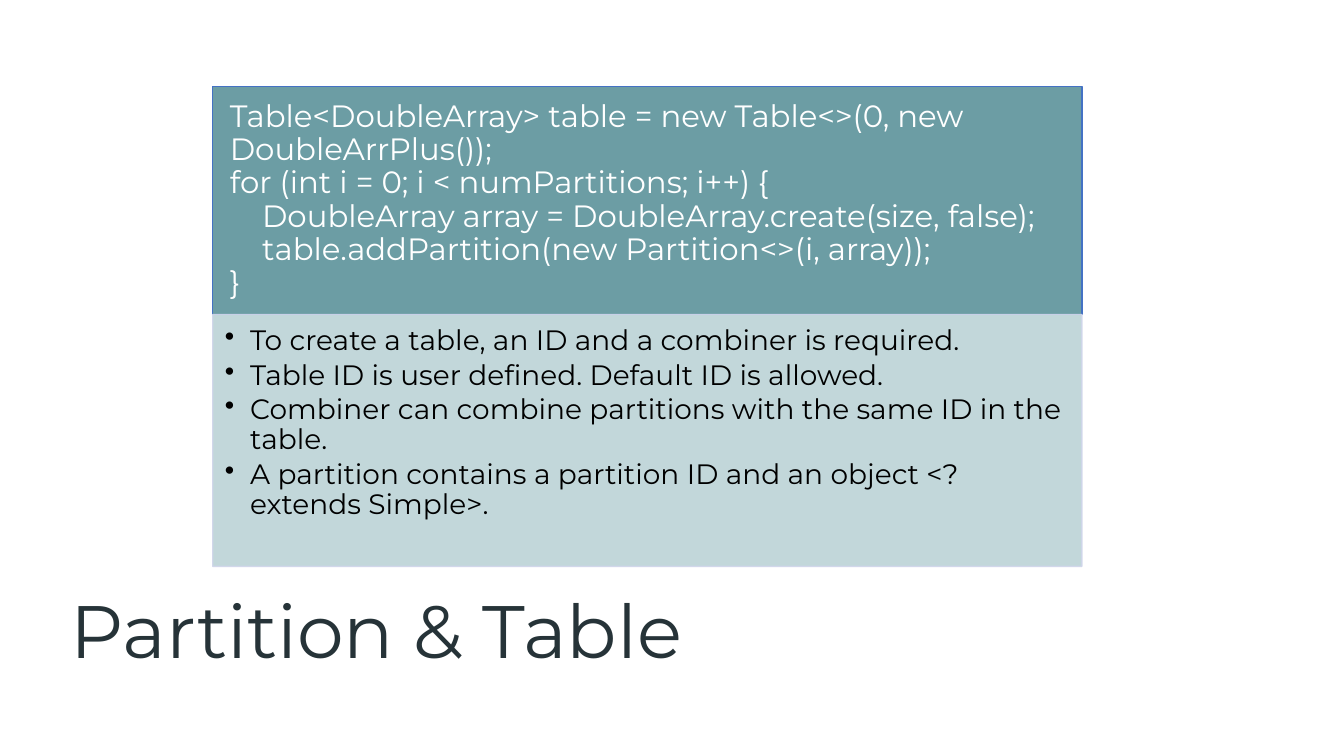
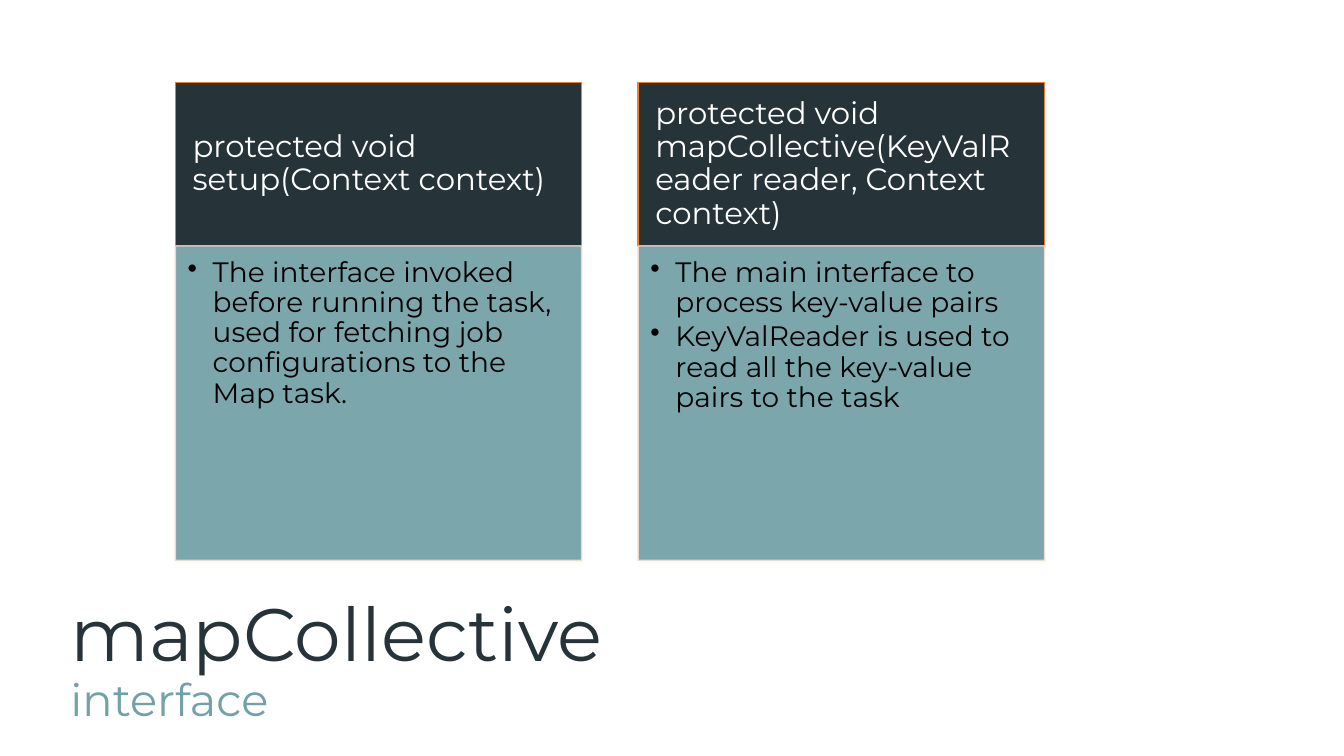
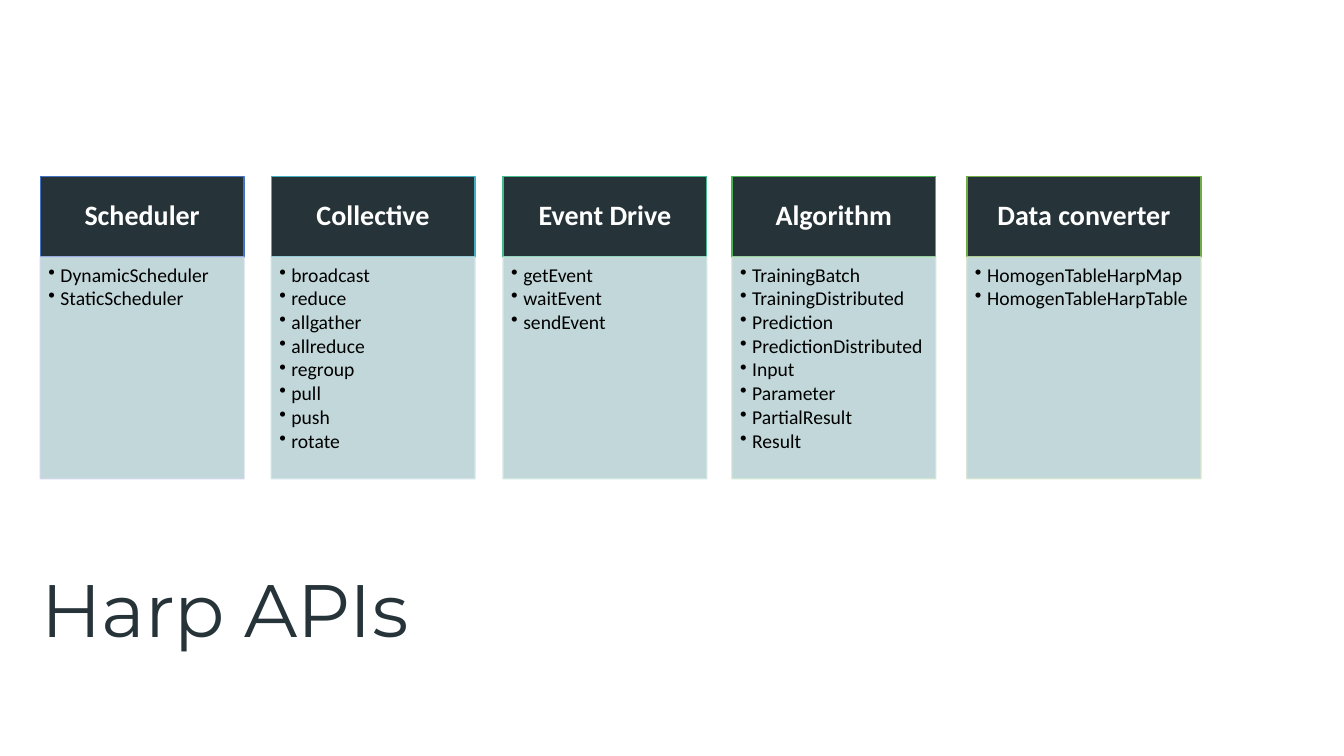
from dataclasses import dataclass
from lxml.etree import SubElement as Sub
from pptx import Presentation
from pptx.dml.color import RGBColor as RGB
from pptx.enum.shapes import MSO_SHAPE as Shape
from pptx.enum.text import MSO_ANCHOR as Anchor, PP_ALIGN as Align
from pptx.oxml.ns import qn
from pptx.util import Pt

PX = 9144


@dataclass(frozen=True)
class Theme:
    dark: str = "263338"
    teal: str = "6C9DA4"
    pale: str = "BCD3D6"
    soft: str = "72A1A8"
    white: str = "FFFFFF"
    black: str = "000000"
    blue: str = "4472C4"
    haze: str = "CFD5EA"
    orange: str = "ED7D31"
    peach: str = "F8D7CE"
    font: str = "Montserrat"
    title: int = 53
    sub: int = 32
    lead: float = 0.9
    clear: int = 90


@dataclass(frozen=True)
class Look:
    font: str
    head: int
    body: int
    bold: bool
    align: Align
    pad: tuple
    inset: tuple
    hang: int
    after: float


T = Theme()
WIDE = Look(T.font, 22, 20, False, Align.LEFT, (17, 10, 17, 10), (12, 12, 16, 17), 25, 3)
SLIM = Look("Calibri", 20, 14, True, Align.CENTER, (16, 9, 16, 9), (8, 8, 11, 12), 12, 1.8)


class Deck:
    def __init__(self):
        self.prs = Presentation()
        self.prs.slide_width = 1333 * PX
        self.prs.slide_height = 750 * PX

    def page(self):
        self.slide = self.prs.slides.add_slide(self.prs.slide_layouts[6])

    def frame(self, shape, inset, anchor):
        frame = shape.text_frame
        frame.word_wrap = True
        frame.vertical_anchor = anchor
        left, top, right, low = [n * PX for n in inset]
        frame.margin_left, frame.margin_top = left, top
        frame.margin_right, frame.margin_bottom = right, low
        return frame

    def run(self, para, text, font, size, color, bold=False):
        run = para.add_run()
        run.text = text
        run.font.name = font
        run.font.size = Pt(size)
        run.font.bold = bold
        run.font.color.rgb = RGB.from_string(color)

    def lines(self, frame, count):
        for i in range(count):
            para = frame.add_paragraph() if i else frame.paragraphs[0]
            para.line_spacing = T.lead
            yield para

    def box(self, x, y, w, h, fill, edge, clear=100):
        box = self.slide.shapes.add_shape(Shape.RECTANGLE, x * PX, y * PX, w * PX, h * PX)
        box.shadow.inherit = False
        box.line.width = Pt(1)
        box.fill.solid()
        for paint, color in ((box.fill, fill), (box.line.fill, edge)):
            paint.solid()
            paint.fore_color.rgb = RGB.from_string(color)
        if clear < 100:
            for node in box._element.spPr.iter(qn("a:srgbClr")):
                Sub(node, qn("a:alpha"), val=str(clear * 1000))
        return box

    def head(self, area, look, fill, edge, rows):
        frame = self.frame(self.box(*area, fill, edge), look.pad, Anchor.MIDDLE)
        for para, (text, indent) in zip(self.lines(frame, len(rows)), rows):
            para.alignment = look.align
            para._p.get_or_add_pPr().set("marL", str(indent * PX))
            self.run(para, text, look.font, look.head, T.white, look.bold)

    def list(self, area, look, fill, edge, items):
        box = self.box(*area, fill, edge, T.clear)
        frame = self.frame(box, look.inset, Anchor.TOP)
        for para, text in zip(self.lines(frame, len(items)), items):
            para.alignment = Align.LEFT
            para.space_after = Pt(look.after)
            props = para._p.get_or_add_pPr()
            props.set("marL", str(look.hang * PX))
            props.set("indent", str(-look.hang * PX))
            Sub(props, qn("a:buChar"), char="•")
            self.run(para, text, look.font, look.body, T.black)

    def card(self, x, y, w, top, low, look, fills, edges, rows, items):
        self.head((x, y, w, top), look, fills[0], edges[0], rows)
        self.list((x, y + top, w, low), look, fills[1], edges[1], items)

    def title(self, x, y, text, sub=None):
        box = self.slide.shapes.add_textbox(x * PX, y * PX, 1150 * PX, 145 * PX)
        frame = self.frame(box, (10, 0, 10, 0), Anchor.TOP)
        para = next(self.lines(frame, 1))
        self.run(para, text, T.font, T.title, T.dark)
        if sub:
            para.add_line_break()
            self.run(para, sub, T.font, T.sub, T.soft)


CODE = [
    ("Table<DoubleArray> table = new Table<>(0, new DoubleArrPlus());", 0),
    ("for (int i = 0; i < numPartitions; i++) {", 0),
    ("DoubleArray array = DoubleArray.create(size, false);", 32),
    ("table.addPartition(new Partition<>(i, array));", 32),
    ("}", 0),
]
NOTES = [
    "To create a table, an ID and a combiner is required.",
    "Table ID is user defined. Default ID is allowed.",
    "Combiner can combine partitions with the same ID in the table.",
    "A partition contains a partition ID and an object <? extends Simple>.",
]
CALLS = [
    ("protected void setup(Context context)",
     ["The interface invoked before running the task, used for fetching job "
      "configurations to the Map task."]),
    ("protected void mapCollective(KeyValReader reader, Context context)",
     ["The main interface to process key-value pairs",
      "KeyValReader is used to read all the key-value pairs to the task"]),
]
APIS = [
    (40, 202, T.blue, T.haze, "Scheduler", ["DynamicScheduler", "StaticScheduler"]),
    (269, 202, "43AFC0", "CFE2E8", "Collective",
     ["broadcast", "reduce", "allgather", "allreduce", "regroup", "pull", "push", "rotate"]),
    (499, 202, "43BB8D", "CFE6E0", "Event Drive", ["getEvent", "waitEvent", "sendEvent"]),
    (726, 202, "45B451", "CFE5D4", "Algorithm",
     ["TrainingBatch", "TrainingDistributed", "Prediction", "PredictionDistributed",
      "Input", "Parameter", "PartialResult", "Result"]),
    (959, 232, "70AD47", "D5E3CF", "Data converter",
     ["HomogenTableHarpMap", "HomogenTableHarpTable"]),
]


def main():
    deck = Deck()

    deck.page()
    deck.card(211, 86, 862, 226, 250, WIDE, (T.teal, T.pale), (T.blue, T.haze), CODE, NOTES)
    deck.title(60, 590, "Partition & Table")

    deck.page()
    for i, (name, items) in enumerate(CALLS):
        deck.card(174 + 459 * i, 82, 403, 162, 312, WIDE, (T.dark, T.teal),
                  (T.orange, T.peach), [(name, 0)], items)
    deck.title(60, 593, "mapCollective", "interface")

    deck.page()
    for x, w, edge, rim, name, items in APIS:
        deck.card(x, 175, w, 80, 220, SLIM, (T.dark, T.pale), (edge, rim), [(name, 0)], items)
    deck.title(31, 569, "Harp APIs")

    deck.prs.save("out.pptx")


if __name__ == "__main__":
    main()
